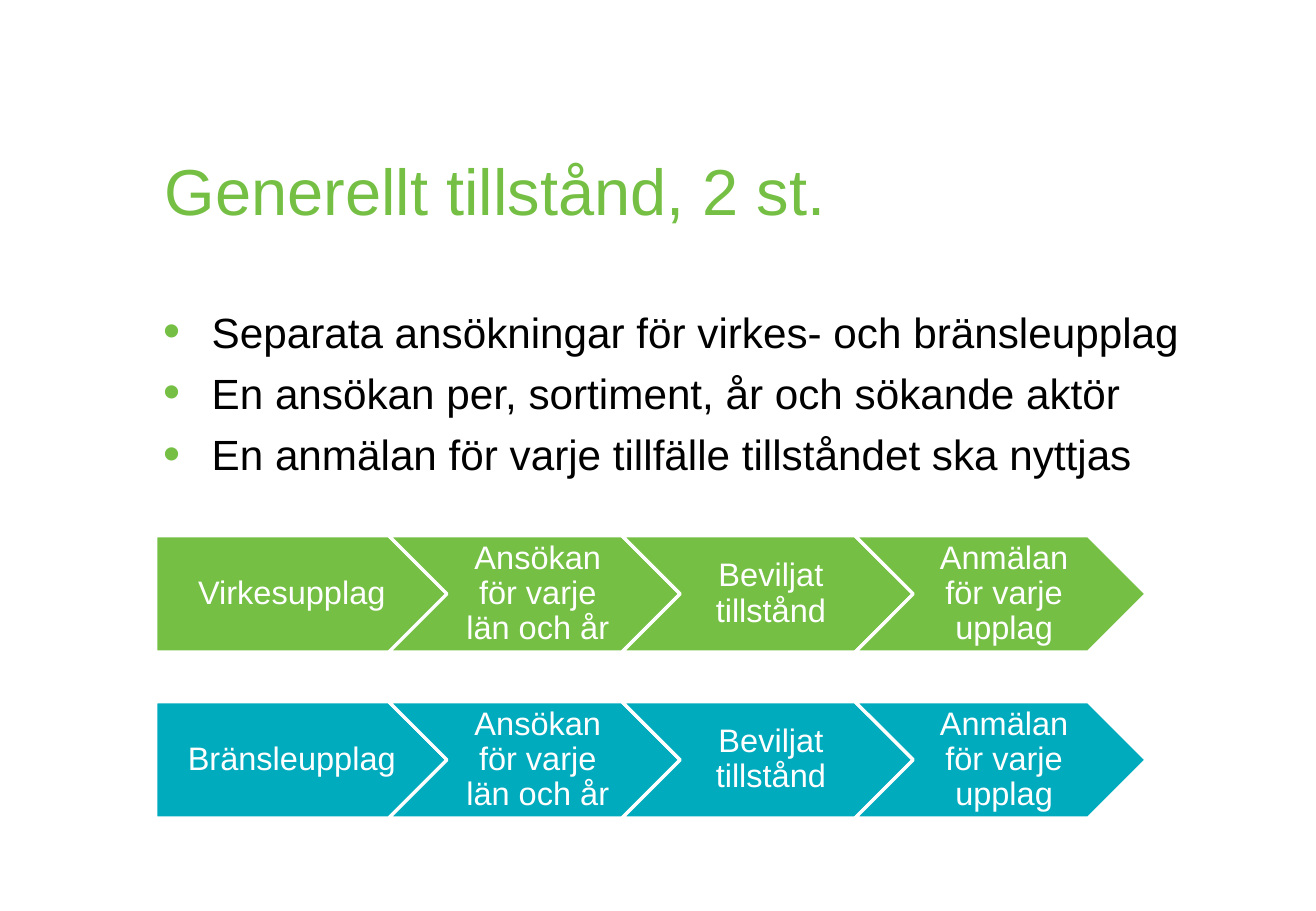
"""Build a slide about general permits with two four-step process rows."""
from lxml.etree import SubElement
from pptx import Presentation
from pptx.dml.color import RGBColor
from pptx.enum.shapes import MSO_SHAPE
from pptx.enum.text import MSO_ANCHOR, MSO_AUTO_SIZE, PP_ALIGN
from pptx.oxml.ns import qn
from pptx.util import Pt

GREEN = RGBColor(0x75, 0xC0, 0x44)
TEAL = RGBColor(0x00, 0xAB, 0xBD)
BLACK = RGBColor(0, 0, 0)
WHITE = RGBColor(0xFF, 0xFF, 0xFF)

BULLETS = [
    "Separata ansökningar för virkes- och bränsleupplag",
    "En ansökan per, sortiment, år och sökande aktör",
    "En anmälan för varje tillfälle tillståndet ska nyttjas",
]
SHARED_STEPS = ["Ansökan för varje län och år", "Beviljat tillstånd", "Anmälan för varje upplag"]
PROCESSES = [("Virkesupplag", GREEN, 329.8), ("Bränsleupplag", TEAL, 432)]


class SlideBuilder:
    font_name = "Arial"
    row_left = 95.8
    step_pitch = 143.5
    step_width = 179.3
    step_height = 71.7

    def __init__(self, slide):
        self.slide = slide

    def add_run(self, paragraph, text, size, color):
        run = paragraph.add_run()
        run.text = text
        run.font.name = self.font_name
        run.font.size = Pt(size)
        run.font.color.rgb = color

    def format_frame(self, shape, anchor, left=7.9, right=7.9):
        frame = shape.text_frame
        frame.word_wrap = True
        frame.auto_size = MSO_AUTO_SIZE.NONE
        frame.vertical_anchor = anchor
        frame.margin_left, frame.margin_right = Pt(left), Pt(right)
        frame.margin_top = frame.margin_bottom = Pt(4)
        return frame

    def place(self, shape, left, top, width, height):
        shape.left, shape.top = Pt(left), Pt(top)
        shape.width, shape.height = Pt(width), Pt(height)

    def title(self, text):
        title = self.slide.shapes.title
        self.place(title, 93.6, 88.6, 640.8, 56.2)
        paragraph = self.format_frame(title, MSO_ANCHOR.BOTTOM).paragraphs[0]
        paragraph.alignment = PP_ALIGN.LEFT
        self.add_run(paragraph, text, 40, GREEN)

    def bullet(self, paragraph):
        properties = paragraph._p.get_or_add_pPr()
        properties.set("marL", str(Pt(29.5)))
        properties.set("indent", str(-Pt(29.5)))
        color = SubElement(properties, qn("a:buClr"))
        SubElement(color, qn("a:srgbClr"), val=str(GREEN))
        SubElement(properties, qn("a:buSzPct"), val="115000")
        SubElement(properties, qn("a:buFont"), typeface=self.font_name)
        SubElement(properties, qn("a:buChar"), char="•")

    def bullet_list(self, items):
        body = self.slide.placeholders[1]
        self.place(body, 92.9, 184.3, 680.4, 317.5)
        frame = self.format_frame(body, MSO_ANCHOR.TOP)
        for index, item in enumerate(items):
            paragraph = frame.add_paragraph() if index else frame.paragraphs[0]
            self.bullet(paragraph)
            paragraph.space_before = Pt(6.4 if index else 0)
            self.add_run(paragraph, item, 26, BLACK)

    def process(self, steps, color, top):
        for index, text in enumerate(steps):
            kind = MSO_SHAPE.CHEVRON if index else MSO_SHAPE.PENTAGON
            left = self.row_left + index * self.step_pitch
            step = self.slide.shapes.add_shape(
                kind, Pt(left), Pt(top), Pt(self.step_width), Pt(self.step_height))
            step.shadow.inherit = False
            step.fill.solid()
            step.fill.fore_color.rgb = color
            step.line.color.rgb = WHITE
            step.line.width = Pt(2)
            left_margin = 6.3 if index else 8.4
            frame = self.format_frame(step, MSO_ANCHOR.MIDDLE, left_margin, 2.1)
            paragraph = frame.paragraphs[0]
            paragraph.alignment = PP_ALIGN.CENTER
            paragraph.line_spacing = 0.9
            self.add_run(paragraph, text, 20, WHITE)


def main():
    presentation = Presentation()
    presentation.slide_width = Pt(810)
    presentation.slide_height = Pt(560.9)
    builder = SlideBuilder(presentation.slides.add_slide(presentation.slide_layouts[1]))
    builder.title("Generellt tillstånd, 2 st.")
    builder.bullet_list(BULLETS)
    for name, color, top in PROCESSES:
        builder.process([name, *SHARED_STEPS], color, top)
    presentation.save("out.pptx")


if __name__ == "__main__":
    main()
